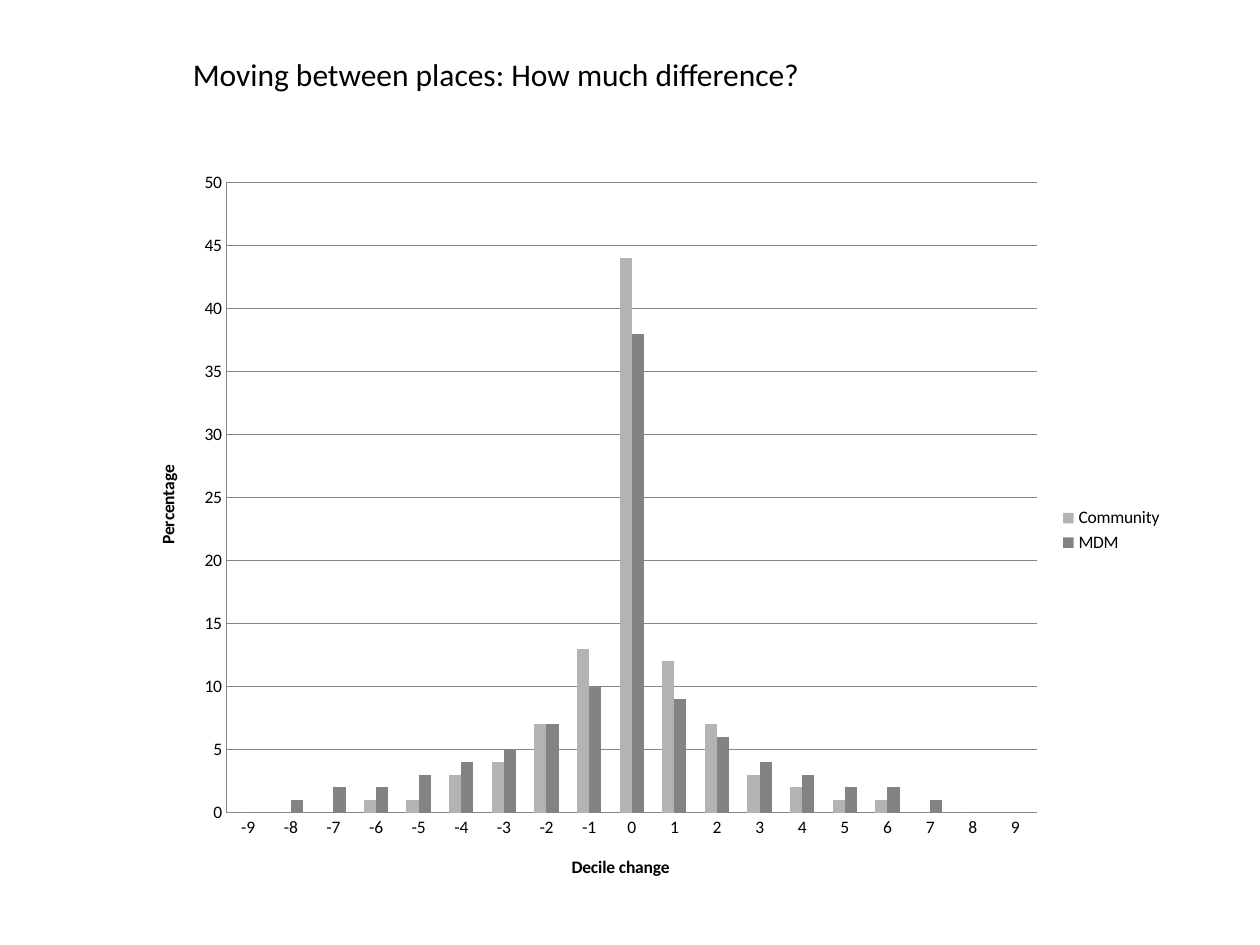
from dataclasses import dataclass

from pptx import Presentation
from pptx.chart.data import CategoryChartData
from pptx.dml.color import RGBColor
from pptx.enum.chart import XL_CHART_TYPE, XL_LEGEND_POSITION, XL_TICK_MARK
from pptx.enum.text import MSO_ANCHOR, PP_ALIGN
from pptx.util import Inches, Pt

COLUMNS = XL_CHART_TYPE.COLUMN_CLUSTERED
LEGEND_RIGHT = XL_LEGEND_POSITION.RIGHT
NO_TICK = XL_TICK_MARK.NONE
ANCHOR_TOP = MSO_ANCHOR.TOP
ALIGN_LEFT = PP_ALIGN.LEFT
TITLE_ONLY = 5


@dataclass(frozen=True)
class Theme:
    font: str = "Calibri"
    text: RGBColor = RGBColor(0, 0, 0)
    axis: RGBColor = RGBColor(0x86, 0x86, 0x86)
    community: RGBColor = RGBColor(0xB3, 0xB3, 0xB3)
    mdm: RGBColor = RGBColor(0x83, 0x83, 0x83)
    title_size: Pt = Pt(18)
    chart_size: Pt = Pt(10)


@dataclass(frozen=True)
class ColumnSeries:
    name: str
    color: RGBColor
    values: tuple[int, ...]


THEME = Theme()
DECILES = [str(change) for change in range(-9, 10)]
SERIES = (
    ColumnSeries("Community", THEME.community,
                 (0, 0, 0, 1, 1, 3, 4, 7, 13, 44, 12, 7, 3, 2, 1, 1, 0, 0, 0)),
    ColumnSeries("MDM", THEME.mdm,
                 (0, 1, 2, 2, 3, 4, 5, 7, 10, 38, 9, 6, 4, 3, 2, 2, 1, 0, 0)),
)


def apply_format(target, **values) -> None:
    for name, value in values.items():
        setattr(target, name, value)


def format_font(font, size: Pt, bold: bool = False) -> None:
    apply_format(font, name=THEME.font, size=size, bold=bold)
    font.color.rgb = THEME.text


def format_line(line) -> None:
    line.color.rgb = THEME.axis
    line.width = Pt(0.75)


def add_title(page, text: str) -> None:
    title = page.shapes.title
    apply_format(title, left=Inches(1.43), top=Inches(0.39),
                 width=Inches(7.45), height=Inches(0.4))
    frame = title.text_frame
    apply_format(frame, word_wrap=True, vertical_anchor=ANCHOR_TOP)
    para = frame.paragraphs[0]
    para.alignment = ALIGN_LEFT
    span = para.add_run()
    span.text = text
    format_font(span.font, THEME.title_size)


def format_axis(axis, title: str) -> None:
    apply_format(axis, major_tick_mark=NO_TICK, minor_tick_mark=NO_TICK)
    format_line(axis.format.line)
    format_font(axis.tick_labels.font, THEME.chart_size)
    span = axis.axis_title.text_frame.paragraphs[0].add_run()
    span.text = title
    format_font(span.font, THEME.chart_size, bold=True)


def add_decile_chart(page) -> None:
    data = CategoryChartData(number_format="0")
    data.categories = DECILES
    for series in SERIES:
        data.add_series(series.name, series.values)
    chart = page.shapes.add_chart(COLUMNS, Inches(1.04), Inches(1.25),
                                  Inches(8.29), Inches(5.92), data).chart
    chart.has_title = False
    format_font(chart.font, THEME.chart_size)

    # Columns
    plot = chart.plots[0]
    apply_format(plot, gap_width=150, overlap=0, vary_by_categories=False)
    for column, series in zip(plot.series, SERIES):
        column.format.fill.solid()
        column.format.fill.fore_color.rgb = series.color

    # Axes and gridlines
    format_axis(chart.category_axis, "Decile change")
    value_axis = chart.value_axis
    format_axis(value_axis, "Percentage")
    apply_format(value_axis, minimum_scale=0, maximum_scale=50,
                 major_unit=5, has_major_gridlines=True)
    format_line(value_axis.major_gridlines.format.line)
    apply_format(value_axis.tick_labels, number_format="0",
                 number_format_is_linked=False)

    # Legend
    chart.has_legend = True
    apply_format(chart.legend, position=LEGEND_RIGHT, include_in_layout=False)
    format_font(chart.legend.font, THEME.chart_size)


def main() -> None:
    deck = Presentation()
    apply_format(deck, slide_width=Inches(10), slide_height=Inches(7.5))
    page = deck.slides.add_slide(deck.slide_layouts[TITLE_ONLY])
    add_decile_chart(page)
    add_title(page, "Moving between places: How much difference?")
    deck.save("out.pptx")


if __name__ == "__main__":
    main()
